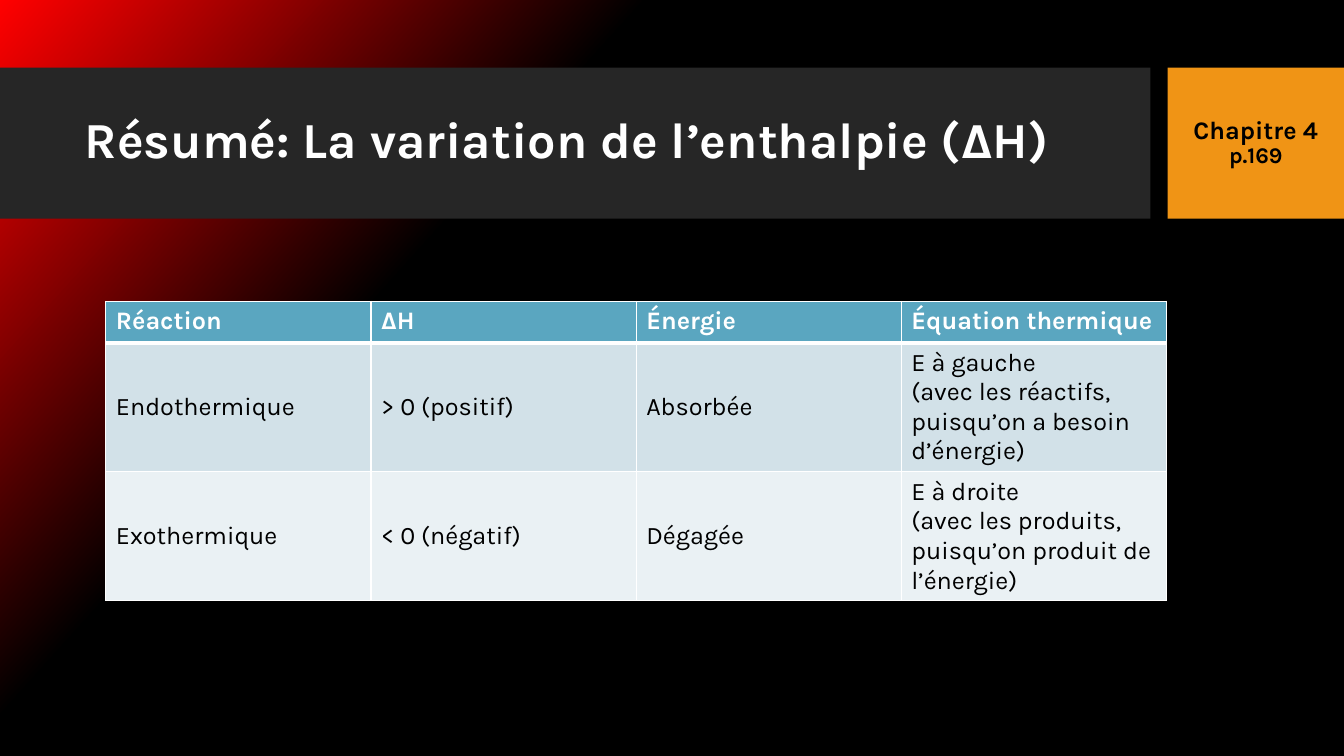
"""Build the enthalpy summary slide."""
from copy import deepcopy
from typing import NamedTuple

from lxml import etree
from pptx import Presentation
from pptx.dml.color import RGBColor
from pptx.enum.shapes import MSO_SHAPE
from pptx.enum.text import MSO_ANCHOR, PP_ALIGN
from pptx.oxml.ns import qn
from pptx.util import Inches, Pt

RECT = MSO_SHAPE.RECTANGLE
TOP, MIDDLE = MSO_ANCHOR.TOP, MSO_ANCHOR.MIDDLE
LEFT, CENTER = PP_ALIGN.LEFT, PP_ALIGN.CENTER
FONT, WHITE, BLACK = "Karla", "FFFFFF", "000000"


class Band(NamedTuple):
    left: float
    width: float
    fill: str


class Row(NamedTuple):
    cells: tuple[str, ...]
    height: float
    fill: str
    color: str = BLACK
    bold: bool = False
    anchor: MSO_ANCHOR = MIDDLE
    top_line: float = 1
    bottom_line: float = 1


TITLE_BAND = Band(0, 11.41, "262626")
CHAPTER_BAND = Band(11.58, 1.75, "F09415")
COLUMN_WIDTH = 2.63
ROWS = [
    Row(("Réaction", "ΔH", "Énergie", "Équation thermique"),
        0.41, "5AA6C0", WHITE, True, TOP, bottom_line=3),
    Row(("Endothermique", "> 0 (positif)", "Absorbée",
         "E à gauche\n(avec les réactifs, puisqu’on a besoin d’énergie)"),
        1.28, "D2E1E8", top_line=3),
    Row(("Exothermique", "< 0 (négatif)", "Dégagée",
         "E à droite\n(avec les produits, puisqu’on produit de l’énergie)"),
        1.28, "EAF1F4"),
]


def rgb(value: str) -> RGBColor:
    return RGBColor.from_string(value)


def write(tf, text: str, *, sizes=(18,), color=BLACK, bold=False,
          align=LEFT, anchor=MIDDLE, spacing=None) -> None:
    tf.word_wrap = True
    tf.vertical_anchor = anchor
    for i, line in enumerate(text.split("\n")):
        p = tf.paragraphs[0] if i == 0 else tf.add_paragraph()
        p.alignment = align
        if spacing:
            p.line_spacing = spacing
        r = p.add_run()
        r.text = line
        r.font.name = FONT
        r.font.size = Pt(sizes[min(i, len(sizes) - 1)])
        r.font.bold = bold
        r.font.color.rgb = rgb(color)


def paint_background(s) -> None:
    fill = s.background.fill
    fill.gradient()
    fill.gradient_angle = 360 - 42
    for stop, position, color in zip(fill.gradient_stops, (0, 0.32), ("FF0000", BLACK)):
        stop.position = position
        stop.color.rgb = rgb(color)
    stops = s.element.find(".//" + qn("a:gsLst"))
    last = deepcopy(stops[-1])
    last.set("pos", "100000")
    stops.append(last)


def add_band(s, band: Band):
    sp = s.shapes.add_shape(RECT, Inches(band.left), Inches(0.67),
                            Inches(band.width), Inches(1.5))
    sp.shadow.inherit = False
    sp.fill.solid()
    sp.fill.fore_color.rgb = rgb(band.fill)
    sp.line.fill.background()
    return sp


def set_borders(cell, row: Row) -> None:
    tc_pr = cell._tc.get_or_add_tcPr()
    widths = {"lnL": 1, "lnR": 1, "lnT": row.top_line, "lnB": row.bottom_line}
    for i, (side, width) in enumerate(widths.items()):
        ln = etree.Element(qn(f"a:{side}"), w=str(Pt(width)))
        solid = etree.SubElement(ln, qn("a:solidFill"))
        etree.SubElement(solid, qn("a:srgbClr"), val=WHITE)
        tc_pr.insert(i, ln)


def add_summary_table(s) -> None:
    columns = len(ROWS[0].cells)
    table = s.shapes.add_table(
        len(ROWS), columns, Inches(1.05), Inches(2.99),
        Inches(columns * COLUMN_WIDTH), Inches(sum(row.height for row in ROWS))).table
    for column in table.columns:
        column.width = Inches(COLUMN_WIDTH)
    for i, row in enumerate(ROWS):
        table.rows[i].height = Inches(row.height)
        for j, text in enumerate(row.cells):
            cell = table.cell(i, j)
            cell.fill.solid()
            cell.fill.fore_color.rgb = rgb(row.fill)
            write(cell.text_frame, text, color=row.color, bold=row.bold)
            cell.vertical_anchor = row.anchor
            set_borders(cell, row)


def add_title(s) -> None:
    title = s.shapes.title
    title.left, title.top = Inches(0.74), Inches(0.82)
    title.width, title.height = Inches(10.51), Inches(1.18)
    write(title.text_frame, "Résumé: La variation de l’enthalpie (ΔH)",
          sizes=(36,), color=WHITE, bold=True, spacing=0.9)
    s.shapes.element.append(title.element)


def main() -> None:
    prs = Presentation()
    prs.slide_width, prs.slide_height = Inches(13.33), Inches(7.5)
    s = prs.slides.add_slide(prs.slide_layouts[5])
    paint_background(s)
    add_band(s, TITLE_BAND)
    chapter = add_band(s, CHAPTER_BAND)
    write(chapter.text_frame, "Chapitre 4\np.169", sizes=(18, 16),
          bold=True, align=CENTER, spacing=0.9)
    add_title(s)
    add_summary_table(s)
    prs.save("out.pptx")


if __name__ == "__main__":
    main()
